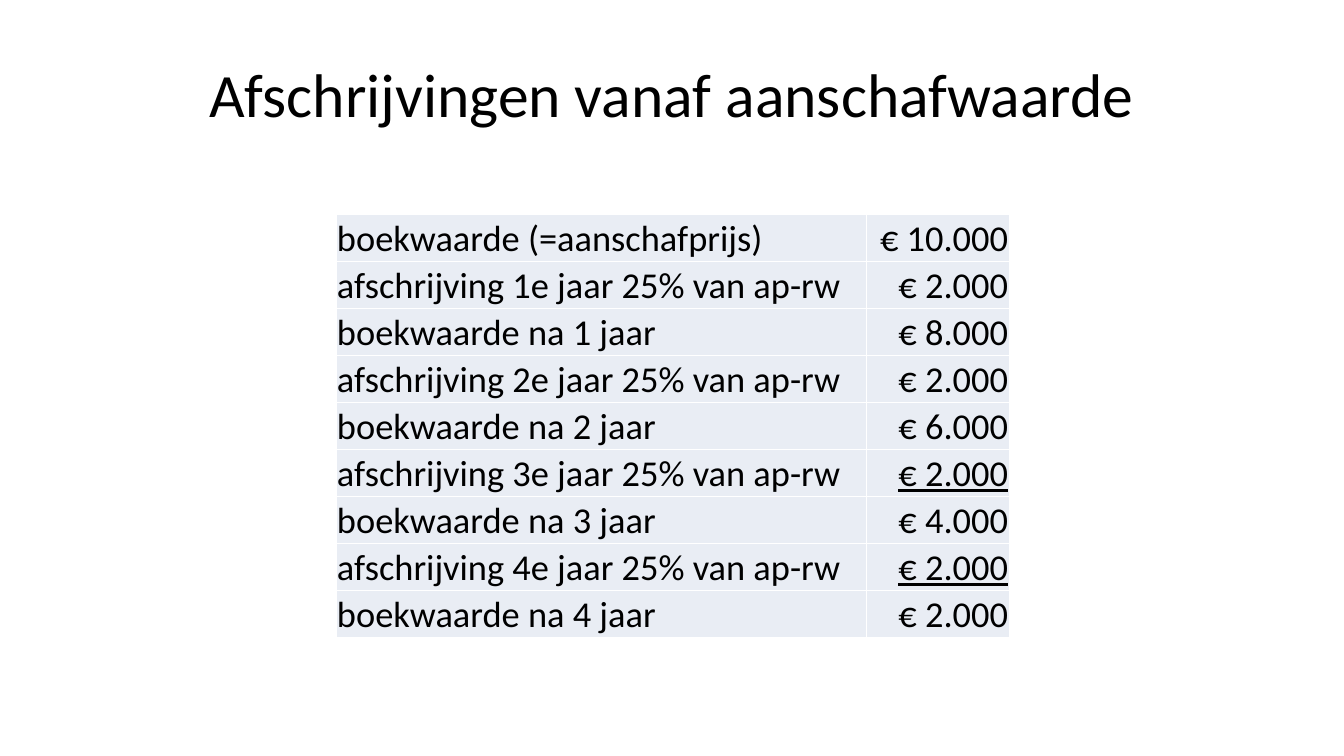
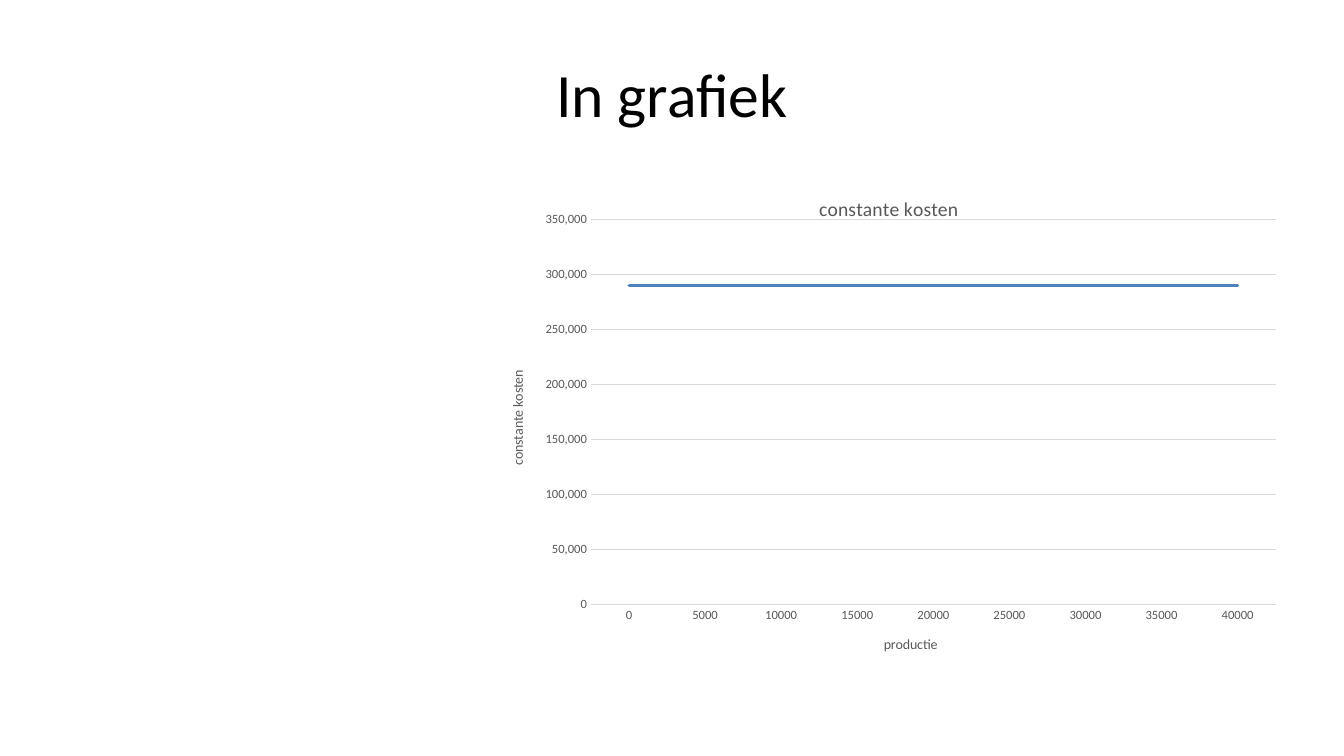
from lxml.etree import SubElement as Sub
from pptx import Presentation
from pptx.chart.data import CategoryChartData as Data
from pptx.dml.color import RGBColor as RGB
from pptx.enum.chart import XL_CHART_TYPE as Kind, XL_TICK_MARK as Tick
from pptx.enum.text import MSO_ANCHOR as Anchor, PP_ALIGN as Align
from pptx.oxml.ns import qn
from pptx.util import Pt

HEX = {
    "ink": "000000",
    "gray": "595959",
    "grid": "D9D9D9",
    "cell": "E9EDF4",
    "edge": "FFFFFF",
    "line": "4F81BD",
}


def put(item, **vals):
    for name, val in vals.items():
        setattr(item, name, val)


class Deck:
    face = "Calibri"
    size = 960, 540
    head = 48, 21.6, 864, 90

    def __init__(self):
        self.prs = Presentation()
        wide, high = map(Pt, self.size)
        put(self.prs, slide_width=wide, slide_height=high)

    def font(self, font, size, tone="ink", **more):
        put(font, name=self.face, size=Pt(size), **{"bold": False, **more})
        font.color.rgb = RGB.from_string(HEX[tone])

    def stroke(self, line, tone, width):
        line.color.rgb = RGB.from_string(HEX[tone])
        line.width = Pt(width)

    def slide(self, text):
        self.page = self.prs.slides.add_slide(self.prs.slide_layouts[5])
        title = self.page.shapes.title
        left, top, wide, high = map(Pt, self.head)
        put(title, left=left, top=top, width=wide, height=high)
        frame = title.text_frame
        put(frame, text=text, vertical_anchor=Anchor.MIDDLE, word_wrap=True)
        para = frame.paragraphs[0]
        para.alignment = Align.CENTER
        self.font(para.runs[0].font, 44)

    def edges(self, cell, tone, width):
        props = cell._tc.get_or_add_tcPr()
        for spot, side in enumerate("LRTB"):
            line = Sub(props, qn(f"a:ln{side}"), w=str(Pt(width)))
            Sub(Sub(line, qn("a:solidFill")), qn("a:srgbClr"), val=HEX[tone])
            props.insert(spot, line)

    def table(self, rows, left, top, cols, high, under):
        box = (left, top, sum(cols), high * len(rows))
        table = self.page.shapes.add_table(len(rows), len(cols), *map(Pt, box)).table
        put(table, first_row=False, horz_banding=False)
        for col, wide in zip(table.columns, cols):
            col.width = Pt(wide)
        for r, row in enumerate(rows):
            table.rows[r].height = Pt(high)
            for c, text in enumerate(row):
                cell = table.cell(r, c)
                put(cell, text=text, vertical_anchor=Anchor.BOTTOM,
                    margin_left=Pt(0.7), margin_right=Pt(0.7),
                    margin_top=Pt(0.7), margin_bottom=0)
                cell.fill.solid()
                cell.fill.fore_color.rgb = RGB.from_string(HEX["cell"])
                self.edges(cell, "edge", 1)
                para = cell.text_frame.paragraphs[0]
                para.alignment = Align.RIGHT if c else Align.LEFT
                self.font(para.runs[0].font, 26, underline=bool(c and r in under))

    def label(self, owner, text, size):
        frame = owner.text_frame
        frame.text = text
        self.font(frame.paragraphs[0].runs[0].font, size, "gray")

    def axis(self, axis, text):
        put(axis, major_tick_mark=Tick.NONE, minor_tick_mark=Tick.NONE)
        self.label(axis.axis_title, text, 10)
        self.font(axis.tick_labels.font, 9, "gray")

    def layout(self, chart, **area):
        plot = chart._chartSpace.chart.plotArea
        for old in plot.findall(qn("c:layout")):
            plot.remove(old)
        frame = Sub(plot, qn("c:layout"))
        plot.insert(0, frame)
        hold = Sub(frame, qn("c:manualLayout"))
        modes = {"layoutTarget": "inner", "xMode": "edge", "yMode": "edge"}
        for name, val in {**modes, **area}.items():
            Sub(hold, qn(f"c:{name}"), val=str(val))

    def chart(self, box, title, names, cats, vals, top, step):
        data = Data(number_format="#,##0")
        data.categories = cats
        data.add_series("Series 1", vals)
        chart = self.page.shapes.add_chart(Kind.LINE, *map(Pt, box), data).chart
        put(chart, has_legend=False, has_title=True)
        self.font(chart.font, 10)
        self.label(chart.chart_title, title, 14)
        chart.chart_title.include_in_layout = False
        across, up = chart.category_axis, chart.value_axis
        for axis, name in zip((across, up), names):
            self.axis(axis, name)
        self.stroke(across.format.line, "grid", 0.75)
        up.format.line.fill.background()
        put(up, minimum_scale=0, maximum_scale=top, major_unit=step)
        put(up.tick_labels, number_format="#,##0", number_format_is_linked=False)
        self.stroke(up.major_gridlines.format.line, "grid", 0.75)
        plot = chart.plots[0]
        plot.vary_by_categories = False
        line = plot.series[0]
        line.smooth = False
        self.stroke(line.format.line, "line", 2.25)
        line.format.line._ln.set("cap", "rnd")
        self.layout(chart, x=0.115, y=0.087, w=0.885, h=0.771)


def main():
    deck = Deck()
    deck.slide("Afschrijvingen vanaf aanschafwaarde")
    rows = [("boekwaarde (=aanschafprijs)", "€ 10.000")]
    for year in range(1, 5):
        rows += [
            (f"afschrijving {year}e jaar 25% van ap-rw", "€ 2.000"),
            (f"boekwaarde na {year} jaar", f"€ {10 - 2 * year}.000"),
        ]
    deck.table(rows, 240, 153, (378.7, 102.2), 33.6, under=(5, 7))

    deck.slide("In grafiek")
    cats = [str(n) for n in range(0, 40001, 5000)]
    deck.chart((358.6, 126, 553, 356.4), "constante kosten",
               ("productie", "constante kosten"),
               cats, [290000] * len(cats), 350000, 50000)
    deck.prs.save("out.pptx")


if __name__ == "__main__":
    main()
